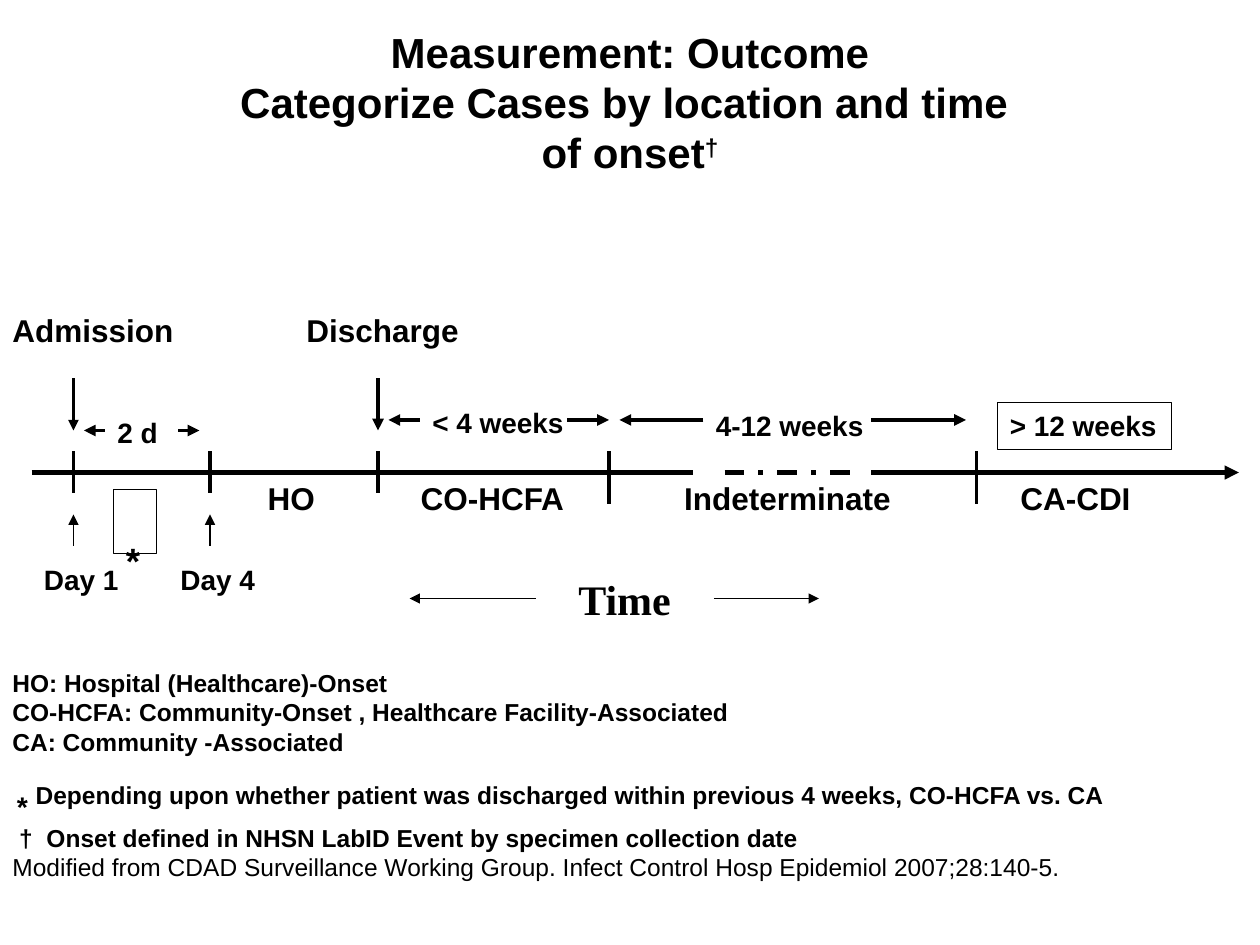
from dataclasses import dataclass

from lxml.etree import SubElement
from pptx import Presentation
from pptx.dml.color import RGBColor as RGB
from pptx.enum.dml import MSO_LINE as Dash
from pptx.enum.shapes import MSO_CONNECTOR as Conn, MSO_SHAPE as Shape
from pptx.enum.text import MSO_ANCHOR as Anchor, MSO_AUTO_SIZE as Fit, PP_ALIGN as Align
from pptx.oxml.ns import qn
from pptx.util import Inches, Pt


@dataclass(frozen=True)
class Theme:
    ink: RGB = RGB(0, 0, 0)
    sans: str = "Arial"
    serif: str = "Times New Roman"
    head: int = 24
    label: int = 18
    span: int = 16
    note: int = 14
    star: int = 36
    sign: int = 28
    thin: float = 0.75
    down: float = 2
    mid: float = 2.25
    axis: float = 2.75


T = Theme()
COLS, ROWS = 120, 90
WIDE, HIGH = 10, 7.5

AXIS = 45
DAY1, DAY4, LEAVE, WEEK4, WEEK12 = 7, 20, 36, 58, 93


def put(item, **vals):
    for key, val in vals.items():
        setattr(item, key, val)


def col(n):
    return Inches(WIDE * n / COLS)


def row(n):
    return Inches(HIGH * n / ROWS)


def line(slide, x1, y1, x2, y2, width, head=False, dash=None):
    item = slide.shapes.add_connector(Conn.STRAIGHT, col(x1), row(y1), col(x2), row(y2))
    item.line.color.rgb = T.ink
    put(item.line, width=Pt(width), dash_style=dash)
    props = item._element.spPr
    if head:
        SubElement(props.find(qn("a:ln")), qn("a:tailEnd"), type="triangle")
    SubElement(props, qn("a:effectLst"))


def add_run(para, text, size, face=T.sans, bold=True, base=0):
    """Add a run; base is its rise or drop in percent."""
    run = para.add_run()
    run.text = text
    put(run.font, size=Pt(size), name=face, bold=bold)
    run.font.color.rgb = T.ink
    if base:
        run._r.get_or_add_rPr().set("baseline", str(base * 1000))


def set_frame(item, wrap=False, fit=Fit.SHAPE_TO_FIT_TEXT):
    frame = item.text_frame
    put(frame, word_wrap=wrap, auto_size=fit, vertical_anchor=Anchor.TOP)
    return frame


def add_box(slide, x, y, w, h):
    return slide.shapes.add_textbox(col(x), row(y), col(w), row(h))


def label(slide, text, x, y, w, size, align=Align.LEFT, face=T.sans):
    box = add_box(slide, x, y, w, size / 4 + 0.4)
    para = set_frame(box).paragraphs[0]
    para.alignment = align
    add_run(para, text, size, face)


def frame_box(slide, text, x, y, w, h, size, base=0):
    """Outlined rectangle with a short mark in it."""
    item = slide.shapes.add_shape(Shape.RECTANGLE, col(x), row(y), col(w), row(h))
    item.shadow.inherit = False
    item.fill.background()
    item.line.color.rgb = T.ink
    item.line.width = Pt(T.thin)
    para = set_frame(item).paragraphs[0]
    para.alignment = Align.LEFT
    add_run(para, text, size, base=base)


def title(slide):
    para = set_frame(add_box(slide, 6, 1.9, 108, 15), True, Fit.NONE).paragraphs[0]
    para.alignment = Align.CENTER
    for text in ("Measurement: Outcome", "Categorize Cases by location and time "):
        add_run(para, text, T.head)
        para.add_line_break()
    add_run(para, "of onset", T.head)
    add_run(para, "†", T.head, base=30)


def time_line(slide):
    stops = (3, DAY1, DAY4, LEAVE, WEEK4, 66)
    for x1, x2 in zip(stops, stops[1:]):
        line(slide, x1, AXIS, x2, AXIS, T.axis)
    line(slide, 69, AXIS, 81, AXIS, T.axis, dash=Dash.DASH_DOT)
    line(slide, 83, AXIS, WEEK12, AXIS, T.axis)
    line(slide, WEEK12, AXIS, 118, AXIS, T.axis, head=True)

    for x, low in ((DAY1, 2), (DAY4, 2), (LEAVE, 2), (WEEK4, 3), (WEEK12, 3)):
        line(slide, x, AXIS - 2, x, AXIS + low, T.mid)
    for x, width in ((DAY1, T.down), (LEAVE, T.mid)):
        line(slide, x, 36, x, 41, width, head=True)
    for x in (DAY1, DAY4):
        line(slide, x, 52, x, 49, T.thin, head=True)


def spans(slide):
    """Arrows that point outward from each length of time."""
    for y, width, ends in (
        (41, T.mid, ((10, 8), (17, 19))),
        (40, T.mid, ((40, 37), (54, 58), (67, 59), (83, 92))),
        (57, T.thin, ((51, 39), (68, 78))),
    ):
        for x1, x2 in ends:
            line(slide, x1, y, x2, y, width, head=True)


def labels(slide):
    for text, x, y, w in (
        ("Admission", 0, 29, 18.5),
        ("Discharge", 28, 29, 17.5),
        ("CA-CDI", 96, AXIS, 13.5),
    ):
        label(slide, text, x, y, w, T.label)
    for text, x, w in (
        ("HO ", 24, 8.3),
        ("CO-HCFA", 38.6, 16.6),
        ("Indeterminate", 63, 24),
    ):
        label(slide, text, x, AXIS, w, T.label, Align.CENTER)
    for text, x, y, w in (
        ("2 d", 10, 39, 7),
        ("< 4 weeks", 40, 38, 15.5),
        ("4-12 weeks", 67, 38.3, 17.5),
        ("Day 1", 3, 53, 10.2),
        ("Day 4", 16, 53, 10.2),
    ):
        label(slide, text, x, y, w, T.span)
    label(slide, "Time", 53.9, 54, 13, T.head, face=T.serif)
    frame_box(slide, "> 12 weeks", 95, 38.3, 16.6, 4.5, T.span)
    frame_box(slide, "*", 10.8, 46.6, 4.1, 6.1, T.star, base=-25)


def notes(slide):
    frame = set_frame(add_box(slide, 0, 63, 107, 22))
    small = {"size": T.note}
    lines = (
        [("HO: Hospital (Healthcare)-Onset", small)],
        [("CO-HCFA: Community-Onset , Healthcare Facility-Associated", small)],
        [("CA: Community -Associated", small)],
        [
            (" ", {"size": T.span, "base": -25}),
            ("*", {"size": T.sign, "base": -25}),
            (" ", {"size": T.span}),
            ("Depending upon whether patient was discharged within previous "
             "4 weeks, CO-HCFA vs. CA", small),
        ],
        [(" †  Onset defined in NHSN LabID Event by specimen collection date", small)],
        [("Modified from CDAD Surveillance Working Group. Infect Control Hosp "
          "Epidemiol 2007;28:140-5.", {"size": T.note, "bold": False})],
    )
    for i, runs in enumerate(lines):
        para = frame.add_paragraph() if i else frame.paragraphs[0]
        for text, form in runs:
            add_run(para, text, **form)


def main():
    deck = Presentation()
    put(deck, slide_width=Inches(WIDE), slide_height=Inches(HIGH))
    slide = deck.slides.add_slide(deck.slide_layouts[6])
    for draw in (title, time_line, spans, labels, notes):
        draw(slide)
    deck.save("out.pptx")


if __name__ == "__main__":
    main()
